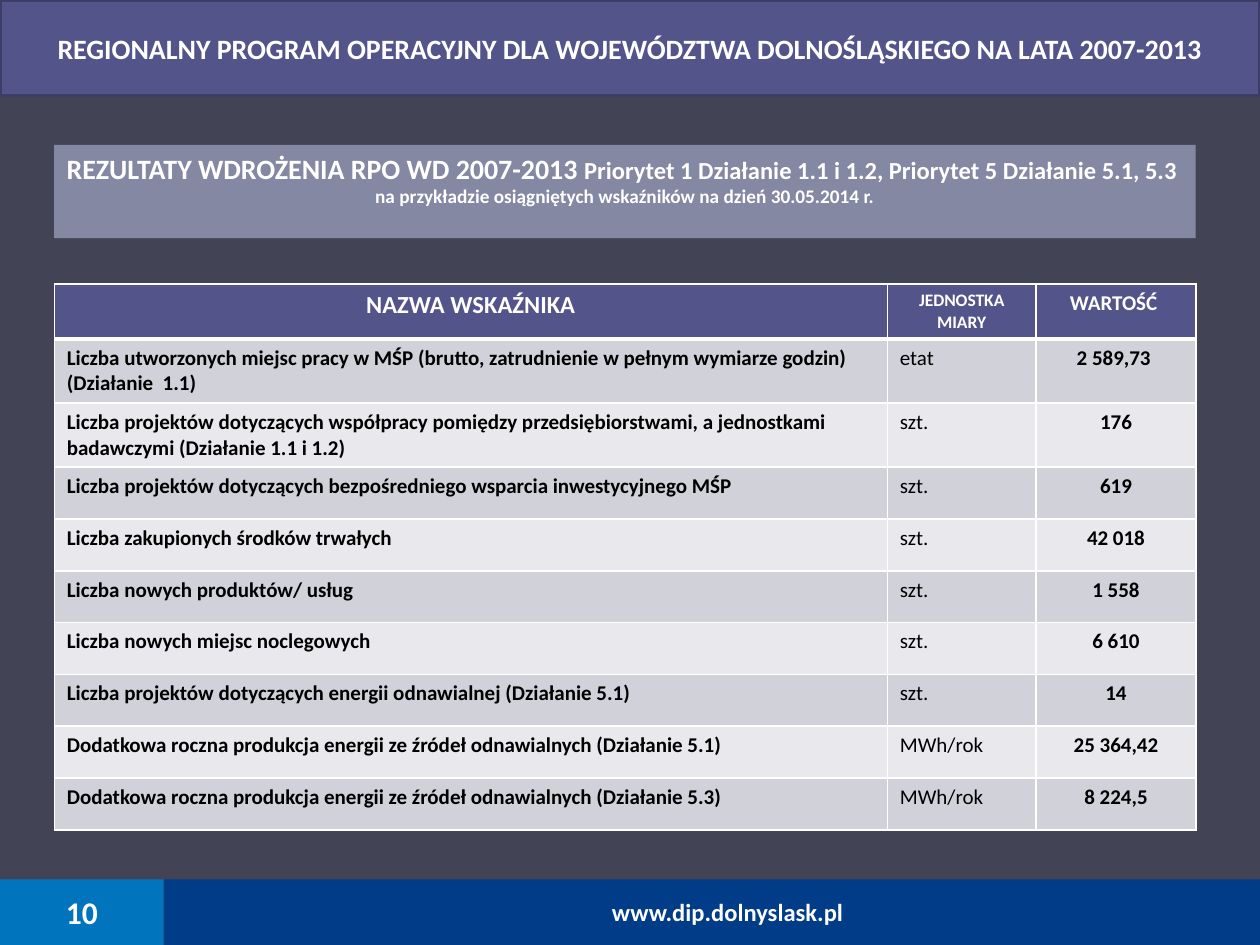
"""Build the slide with regional programme results."""
from lxml.etree import SubElement
from pptx import Presentation
from pptx.dml.color import RGBColor
from pptx.enum.shapes import MSO_SHAPE as Shape
from pptx.enum.text import MSO_ANCHOR as Anchor, PP_ALIGN as Align
from pptx.oxml.ns import qn
from pptx.util import Pt

WHITE = RGBColor(0xFF, 0xFF, 0xFF)
BLACK = RGBColor(0x00, 0x00, 0x00)
SLATE = RGBColor(0x42, 0x44, 0x56)
PURPLE = RGBColor(0x53, 0x54, 0x8A)
DARK_PURPLE = RGBColor(0x3D, 0x3E, 0x66)
GREY_BLUE = RGBColor(0x85, 0x88, 0xA2)
BLUE = RGBColor(0x00, 0x74, 0xBD)
NAVY = RGBColor(0x00, 0x3C, 0x87)
BAND_DARK = RGBColor(0xD1, 0xD1, 0xDA)
BAND_LIGHT = RGBColor(0xE9, 0xE9, 0xED)


def add_text(para, text, size=12, color=WHITE, bold=True, align=Align.CENTER):
    para.alignment = align
    span = para.add_run()
    span.text = text
    span.font.name = "Calibri"
    span.font.size = Pt(size)
    span.font.bold = bold
    span.font.color.rgb = color


def set_borders(cell, bottom):
    props = cell._tc.get_or_add_tcPr()
    for side, width in (("L", 1), ("R", 1), ("T", 1), ("B", bottom)):
        line = SubElement(props, qn(f"a:ln{side}"), w=str(Pt(width)))
        fill = SubElement(line, qn("a:solidFill"))
        SubElement(fill, qn("a:srgbClr"), val=str(WHITE))


deck = Presentation()
deck.slide_width, deck.slide_height = Pt(720), Pt(540)
page = deck.slides.add_slide(deck.slide_layouts[6])
page.background.fill.solid()
page.background.fill.fore_color.rgb = SLATE

header = [("NAZWA WSKAŹNIKA", 14), ("JEDNOSTKA MIARY", 10), ("WARTOŚĆ ", 12)]
indicators = [
    ("Liczba utworzonych miejsc pracy w MŚP (brutto, zatrudnienie w pełnym wymiarze godzin)\n"
     "(Działanie  1.1)", "etat", "2 589,73 "),
    ("Liczba projektów dotyczących współpracy pomiędzy przedsiębiorstwami, a jednostkami "
     "badawczymi (Działanie 1.1 i 1.2)", "szt.", "176"),
    ("Liczba projektów dotyczących bezpośredniego wsparcia inwestycyjnego MŚP", "szt.", "619"),
    ("Liczba zakupionych środków trwałych", "szt.", "42 018"),
    ("Liczba nowych produktów/ usług", "szt.", "1 558"),
    ("Liczba nowych miejsc noclegowych", "szt.", "6 610"),
    ("Liczba projektów dotyczących energii odnawialnej (Działanie 5.1)", "szt.", "14"),
    ("Dodatkowa roczna produkcja energii ze źródeł odnawialnych (Działanie 5.1)",
     "MWh/rok", "25 364,42"),
    ("Dodatkowa roczna produkcja energii ze źródeł odnawialnych (Działanie 5.3)",
     "MWh/rok", "8 224,5"),
]
column_widths = [476, 85, 91.5]
row_heights = [31.4] + [36.6] * 2 + [29.6] * 7
column_formats = [
    {"align": Align.LEFT},
    {"align": Align.LEFT, "bold": False},
    {"align": Align.CENTER},
]

table = page.shapes.add_table(
    len(row_heights), len(column_widths), Pt(31), Pt(162.3),
    Pt(sum(column_widths)), Pt(sum(row_heights))).table
for column, width in zip(table.columns, column_widths):
    column.width = Pt(width)
for row, height in zip(table.rows, row_heights):
    row.height = Pt(height)

for cell, (text, size) in zip(table.rows[0].cells, header):
    set_borders(cell, bottom=3)
    cell.fill.solid()
    cell.fill.fore_color.rgb = PURPLE
    add_text(cell.text_frame.paragraphs[0], text, size=size)

for number, indicator in enumerate(indicators, 1):
    for cell, text, style in zip(table.rows[number].cells, indicator, column_formats):
        set_borders(cell, bottom=1)
        cell.fill.solid()
        cell.fill.fore_color.rgb = BAND_DARK if number % 2 else BAND_LIGHT
        frame = cell.text_frame
        for index, line in enumerate(text.split("\n")):
            para = frame.add_paragraph() if index else frame.paragraphs[0]
            add_text(para, line, color=BLACK, **style)

bars = [
    (31, 82.8, 652.3, 53.3, GREY_BLUE, "REZULTATY WDROŻENIA RPO WD 2007-2013 ", 16),
    (0, 502.5, 93.6, 37.5, BLUE, "10", 18),
    (93.6, 502.5, 626.4, 37.5, NAVY, "www.dip.dolnyslask.pl", 14),
    (0, 0, 720, 54.7, PURPLE,
     "REGIONALNY PROGRAM OPERACYJNY DLA WOJEWÓDZTWA DOLNOŚLĄSKIEGO NA LATA 2007-2013", 16),
]
boxes = []
for left, top, width, height, color, text, size in bars:
    box = page.shapes.add_shape(Shape.RECTANGLE, Pt(left), Pt(top), Pt(width), Pt(height))
    box.shadow.inherit = False
    box.fill.solid()
    box.fill.fore_color.rgb = color
    box.line.fill.background()
    box.text_frame.word_wrap = True
    box.text_frame.vertical_anchor = Anchor.MIDDLE
    add_text(box.text_frame.paragraphs[0], text, size=size)
    boxes.append(box)
subtitle, page_number, address, title = boxes

frame = subtitle.text_frame
frame.vertical_anchor = Anchor.TOP
add_text(frame.paragraphs[0],
         "Priorytet 1 Działanie 1.1 i 1.2, Priorytet 5 Działanie 5.1, 5.3 ",
         size=14, align=Align.JUSTIFY)
add_text(frame.add_paragraph(),
         "na przykładzie osiągniętych wskaźników na dzień 30.05.2014 r.", size=11)

page_number.text_frame.word_wrap = False
address.text_frame.word_wrap = False
address.text_frame.margin_left = Pt(28)
address.text_frame.margin_right = Pt(10)
title.line.color.rgb = DARK_PURPLE
title.line.width = Pt(2)

deck.save("out.pptx")
